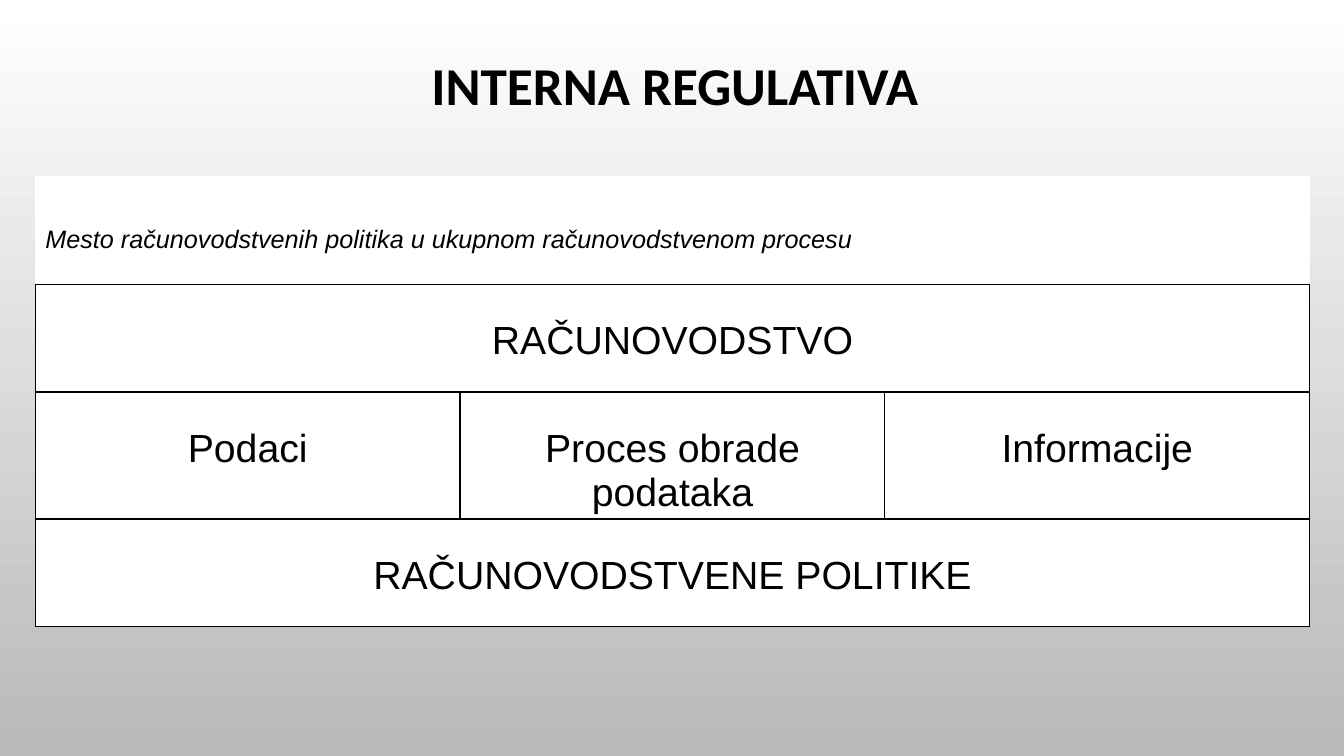
from lxml.etree import SubElement
from pptx import Presentation
from pptx.dml.color import RGBColor
from pptx.enum.text import MSO_ANCHOR as Anchor, PP_ALIGN as Align
from pptx.oxml.ns import qn
from pptx.util import Inches, Pt


def color(value):
    return RGBColor.from_string(value)


def set_border(cell, edge, visible):
    properties = cell._tc.get_or_add_tcPr()
    line = SubElement(properties, qn(f"a:ln{edge}"), w=str(Pt(1)))
    if visible:
        fill = SubElement(line, qn("a:solidFill"))
        SubElement(fill, qn("a:srgbClr"), val="000000")
    else:
        SubElement(line, qn("a:noFill"))


presentation = Presentation()
presentation.slide_width = Inches(13.33)
presentation.slide_height = Inches(7.5)
slide = presentation.slides.add_slide(presentation.slide_layouts[5])

# Background gradient, white at the top
background = slide.background.fill
background.gradient()
background.gradient_angle = 270
for stop, position, value in zip(background.gradient_stops, (0, 1), ("FFFFFF", "B9B9B9")):
    stop.position = position
    stop.color.rgb = color(value)

# Title
title = slide.shapes.title
title.left, title.top = Inches(1.03), Inches(0)
title.width, title.height = Inches(11.33), Inches(1.75)
title.text_frame.text = "INTERNA REGULATIVA"
title.text_frame.vertical_anchor = Anchor.MIDDLE
paragraph = title.text_frame.paragraphs[0]
paragraph.alignment = Align.CENTER
paragraph.line_spacing = 0.9
font = paragraph.runs[0].font
font.name, font.size, font.bold = "Calibri", Pt(38), True
font.color.rgb = color("000000")

# Accounting process table: a row with one text spans all columns
rows = [
    ["Mesto računovodstvenih politika u ukupnom računovodstvenom procesu"],
    ["RAČUNOVODSTVO"],
    ["Podaci", "Proces obrade podataka", "Informacije"],
    ["RAČUNOVODSTVENE POLITIKE"],
]
row_heights = [1.07, 1.07, 1.26, 1.07]
column_count = 3
table = slide.shapes.add_table(
    len(rows), column_count, Inches(0.35), Inches(1.75),
    Inches(12.64), Inches(sum(row_heights))).table

for row_index, (texts, height) in enumerate(zip(rows, row_heights)):
    table.rows[row_index].height = Inches(height)
    is_caption = row_index == 0
    for column_index in range(column_count):
        cell = table.cell(row_index, column_index)
        for edge in "LRTB":
            set_border(cell, edge, not is_caption or edge == "B")
        cell.fill.solid()
        cell.fill.fore_color.rgb = color("FFFFFF")

    if len(texts) == 1:
        table.cell(row_index, 0).merge(table.cell(row_index, column_count - 1))

    for column_index, text in enumerate(texts):
        cell = table.cell(row_index, column_index)
        cell.margin_top = Inches(0.49 if is_caption else 0.35)
        cell.margin_bottom = Inches(0)
        cell.vertical_anchor = Anchor.TOP
        cell.text_frame.text = text
        paragraph = cell.text_frame.paragraphs[0]
        paragraph.alignment = Align.LEFT if is_caption else Align.CENTER
        font = paragraph.runs[0].font
        font.name, font.size = "Arial", Pt(18 if is_caption else 28)
        font.bold, font.italic = False, is_caption
        font.color.rgb = color("000000")

presentation.save("out.pptx")
